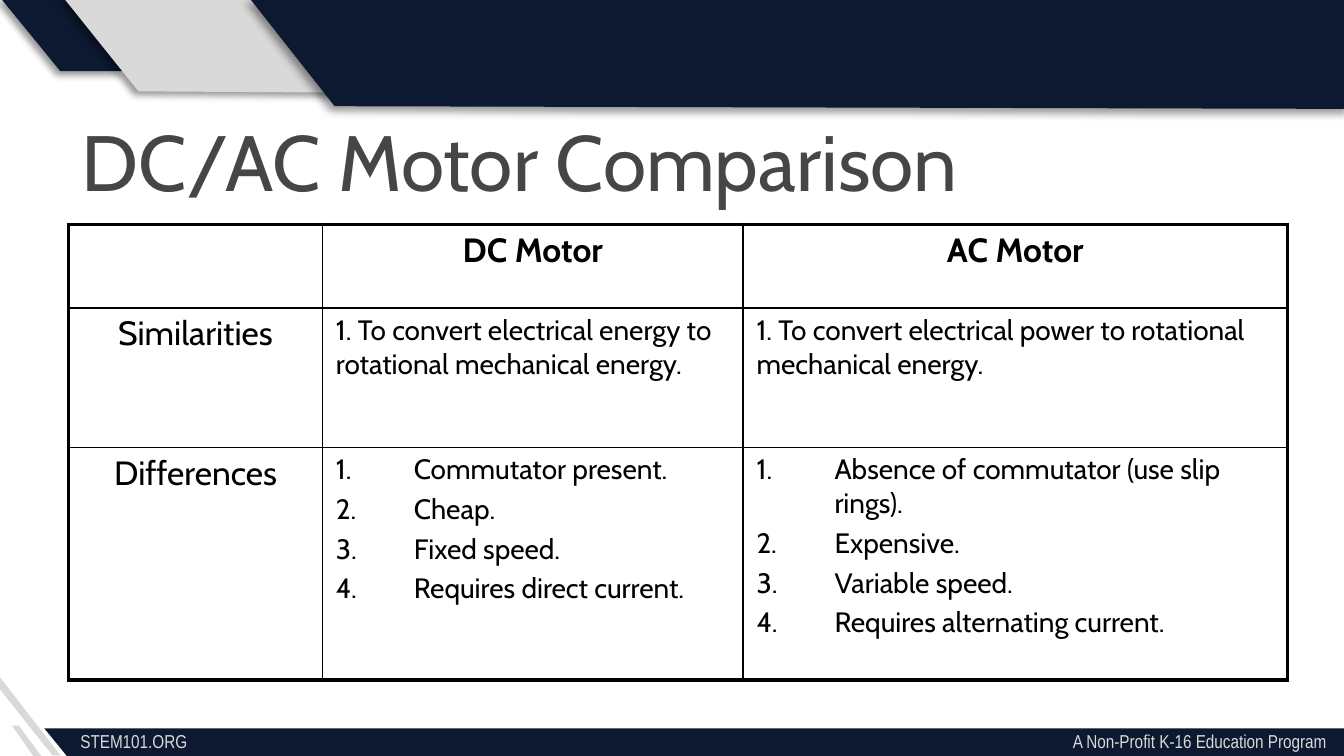
from dataclasses import dataclass

from lxml import etree
from pptx import Presentation
from pptx.dml.color import RGBColor
from pptx.enum.text import MSO_ANCHOR, PP_ALIGN
from pptx.oxml.ns import qn
from pptx.util import Inches, Pt

LEFT, CENTER = PP_ALIGN.LEFT, PP_ALIGN.CENTER
TOP, MIDDLE = MSO_ANCHOR.TOP, MSO_ANCHOR.MIDDLE


@dataclass(frozen=True)
class Theme:
    navy: str = "0C1930"
    gray: str = "D9D9D9"
    heading: str = "464646"
    ink: str = "000000"
    font: str = "Cabin"
    footer_font: str = "Arial Narrow"
    title_size: int = 42
    label_size: int = 18
    body_size: int = 15
    footer_size: int = 10
    outer_line: float = 2.25
    inner_line: float = 1


THEME = Theme()

# Outlines, as points relative to the corner of their region
TOP_BANDS = [
    (THEME.navy, [(0.45, 0.55), (0, 0), (0.48, 0), (0.93, 0.55)]),
    (THEME.gray, [(1.03, 0.7), (0.47, 0), (2.04, 0), (2.59, 0.71)]),
    (THEME.navy, [(2.49, 0.81), (1.86, 0.01), (10.02, 0.01), (10.04, 0.83)]),
]
FOOTER_BANDS = [
    (THEME.gray, [(0.31, 0.59), (0.25, 0.59), (0.09, 0.36), (0.14, 0.36)]),
    (THEME.gray, [(0.45, 0.58), (0.39, 0.58), (0, 0.09), (0, 0)]),
    (THEME.navy, [(10.06, 0.61), (0.51, 0.6), (0.33, 0.38), (10.07, 0.38)]),
]

COLUMN_WIDTHS = [1.89, 3.13, 4.05]
ROW_HEIGHTS = [0.62, 1.04, 1.73]
COMPARISON = [
    ["", "DC Motor", "AC Motor"],
    ["Similarities",
     "1. To convert electrical energy to rotational mechanical energy.",
     "1. To convert electrical power to rotational mechanical energy."],
    ["Differences",
     ["Commutator present.", "Cheap.", "Fixed speed.", "Requires direct current."],
     ["Absence of commutator (use slip rings).", "Expensive.", "Variable speed.",
      "Requires alternating current."]],
]


def add_element(parent, tag, **attributes):
    element = etree.SubElement(parent, qn(tag))
    for name, value in attributes.items():
        element.set(name, str(value))
    return element


def write_text(frame, lines, *, size, color, font=THEME.font, bold=False, align=LEFT,
               numbered=False, right_tab=None):
    frame.word_wrap = True
    for index, line in enumerate(lines):
        para = frame.paragraphs[0] if index == 0 else frame.add_paragraph()
        properties = para._p.get_or_add_pPr()
        if numbered:
            properties.set("marL", str(Inches(0.58)))
            properties.set("indent", str(-Inches(0.58)))
            add_element(properties, "a:buFont", typeface="+mj-lt")
            add_element(properties, "a:buAutoNum", type="arabicPeriod")
        if right_tab:
            tabs = add_element(properties, "a:tabLst")
            add_element(tabs, "a:tab", pos=Inches(right_tab), algn="r")
        para.alignment = align
        if index:
            para.space_before = Pt(0.2 * size)
        span = para.add_run()
        span.text = line
        span.font.name = font
        span.font.size = Pt(size)
        span.font.bold = bold
        span.font.color.rgb = RGBColor.from_string(color)


def add_text(page, box, text, *, anchor=TOP, **text_format):
    shape = page.shapes.add_textbox(*map(Inches, box))
    shape.text_frame.vertical_anchor = anchor
    write_text(shape.text_frame, [text], **text_format)


def add_bands(page, left, top, bands, shadow=False):
    for color, points in bands:
        outline = [(Inches(left + x), Inches(top + y)) for x, y in points]
        builder = page.shapes.build_freeform(*outline[0])
        builder.add_line_segments(outline[1:], close=True)
        band = builder.convert_to_shape()
        band.fill.solid()
        band.fill.fore_color.rgb = RGBColor.from_string(color)
        band.line.fill.background()
        band.shadow.inherit = False
        if shadow:
            effects = band._element.spPr.find(qn("a:effectLst"))
            outer = add_element(effects, "a:outerShdw", blurRad=Pt(4), dist=Pt(3),
                                dir=135 * 60000, algn="tr", rotWithShape=0)
            tint = add_element(outer, "a:srgbClr", val=THEME.ink)
            add_element(tint, "a:alpha", val=40000)


def set_borders(cell, widths):
    properties = cell._tc.get_or_add_tcPr()
    for position, (side, width) in enumerate(widths.items()):
        line = add_element(properties, f"a:ln{side}", w=Pt(width))
        fill = add_element(line, "a:solidFill")
        add_element(fill, "a:srgbClr", val=THEME.ink)
        properties.insert(position, line)


def add_header(page, left, top):
    add_bands(page, left, top, TOP_BANDS, shadow=True)


def add_footer(page, left, top):
    add_bands(page, left, top, FOOTER_BANDS)
    add_text(page, (left + 0.5, top + 0.34, 9.5, 0.27),
             "STEM101.ORG\tA Non-Profit K-16 Education Program", anchor=MIDDLE,
             size=THEME.footer_size, color=THEME.gray, font=THEME.footer_font,
             right_tab=9.27)


def add_comparison(page, left, top):
    last_row, last_column = len(ROW_HEIGHTS) - 1, len(COLUMN_WIDTHS) - 1
    table = page.shapes.add_table(
        len(ROW_HEIGHTS), len(COLUMN_WIDTHS), Inches(left), Inches(top),
        Inches(sum(COLUMN_WIDTHS)), Inches(sum(ROW_HEIGHTS))).table
    table.first_row = table.horz_banding = False
    for column, width in zip(table.columns, COLUMN_WIDTHS):
        column.width = Inches(width)
    for row_index, (contents, height) in enumerate(zip(COMPARISON, ROW_HEIGHTS)):
        table.rows[row_index].height = Inches(height)
        for column_index, content in enumerate(contents):
            cell = table.cell(row_index, column_index)
            cell.margin_left = cell.margin_right = Inches(0.1)
            cell.margin_top = cell.margin_bottom = Inches(0.04)
            cell.fill.background()
            # Heavy frame around the table, thin lines inside
            on_edge = {"L": column_index == 0, "R": column_index == last_column,
                       "T": row_index == 0, "B": row_index == last_row}
            set_borders(cell, {side: THEME.outer_line if edge else THEME.inner_line
                               for side, edge in on_edge.items()})
            if not content:
                continue
            is_list = isinstance(content, list)
            is_label = row_index == 0 or column_index == 0
            write_text(cell.text_frame, content if is_list else [content],
                       size=THEME.label_size if is_label else THEME.body_size,
                       color=THEME.ink, bold=row_index == 0,
                       align=CENTER if is_label else LEFT, numbered=is_list)


def main():
    deck = Presentation()
    # Widescreen, 16 to 9
    deck.slide_width = Inches(10)
    deck.slide_height = deck.slide_width * 9 // 16
    page = deck.slides.add_slide(deck.slide_layouts[6])
    add_header(page, 0, -0.02)
    add_footer(page, 0, 5.04)
    add_comparison(page, 0.51, 1.67)
    # Title
    add_text(page, (0.51, 0.79, 8.68, 0.94), "DC/AC Motor Comparison",
             size=THEME.title_size, color=THEME.heading)
    deck.save("out.pptx")


if __name__ == "__main__":
    main()
